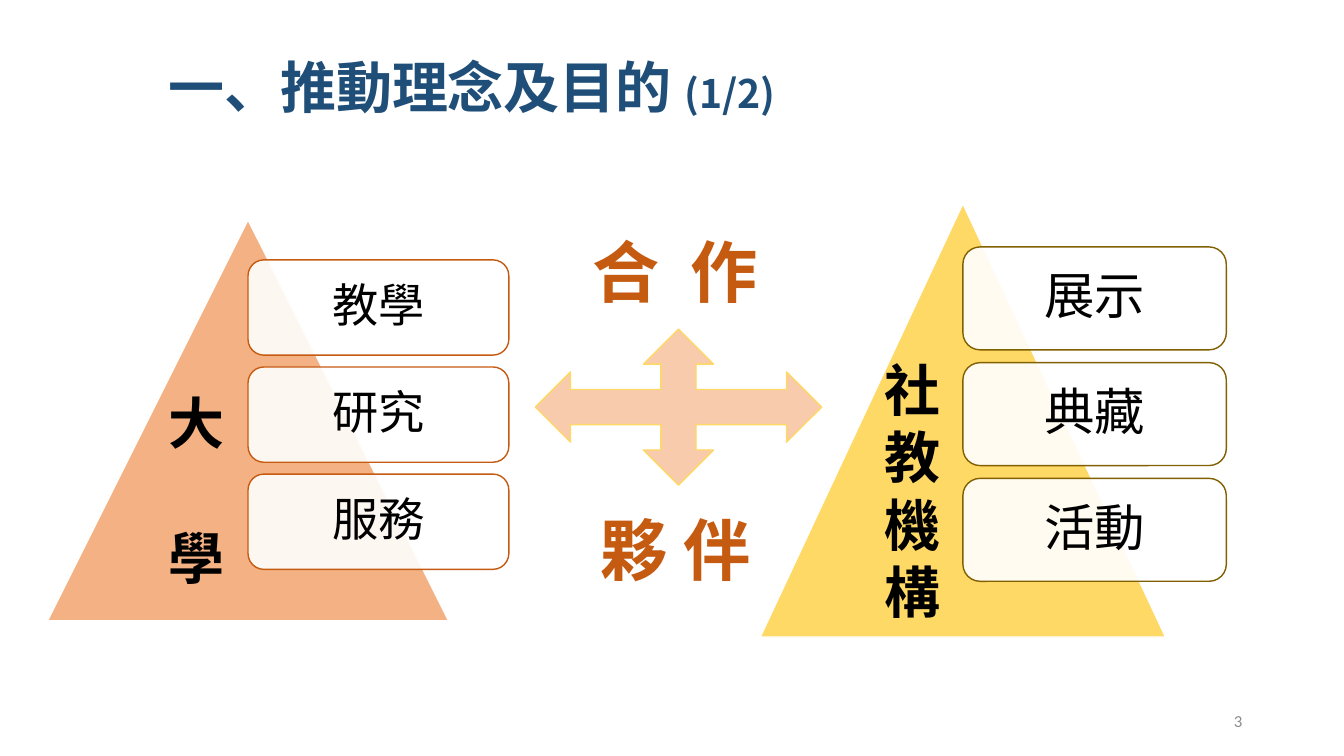
from lxml.etree import SubElement
from pptx import Presentation
from pptx.dml.color import RGBColor
from pptx.enum.shapes import MSO_SHAPE as SHAPE
from pptx.enum.text import MSO_ANCHOR as ANCHOR, MSO_AUTO_SIZE as AUTO, PP_ALIGN as ALIGN
from pptx.oxml.ns import qn
from pptx.util import Inches, Pt

BODY, HEAD = "Calibri", "Noto Sans CJK SC"


def rgb(value):
    return RGBColor.from_string(value)


def add_shape(shapes, kind, box, fill, line, opacity=None):
    sp = shapes.add_shape(kind, *map(Inches, box))
    sp.shadow.inherit = False
    sp.fill.solid()
    sp.fill.fore_color.rgb = rgb(fill)
    sp.line.color.rgb = rgb(line)
    sp.line.width = Pt(1)
    if opacity:
        color = sp.fill._xPr.find(qn("a:solidFill"))[0]
        SubElement(color, qn("a:alpha"), val=str(opacity * 1000))
    return sp


def add_run(p, text, size, color, name=BODY, bold=False, outline=None):
    r = p.add_run()
    r.text = text
    font = r.font
    font.size, font.bold = Pt(size), bold
    font.color.rgb = rgb(color)
    font.name = name
    rpr = r._r.get_or_add_rPr()
    ea = SubElement(rpr, qn("a:ea"), typeface=name)
    rpr.find(qn("a:latin")).addnext(ea)
    if outline:
        ln = rpr.makeelement(qn("a:ln"), {"w": str(Pt(1.75))})
        fill = SubElement(ln, qn("a:solidFill"))
        SubElement(fill, qn("a:srgbClr"), val=outline)
        rpr.insert(0, ln)


def add_text(shapes, box, grow=True):
    tf = shapes.add_textbox(*map(Inches, box)).text_frame
    tf.word_wrap = True
    if grow:
        tf.auto_size = AUTO.SHAPE_TO_FIT_TEXT
    return tf


def add_title(slide, box):
    p = add_text(slide.shapes, box).paragraphs[0]
    add_run(p, "一、推動理念及目的 ", 40, "1F4E79", HEAD, True)
    add_run(p, "(1/2)", 28, "1F4E79", HEAD, True)


def add_pyramid(slide, box, fill, line, cards, size):
    x, y, w, h = box
    shapes = slide.shapes.add_group_shape().shapes
    add_shape(shapes, SHAPE.ISOSCELES_TRIANGLE, box, fill, "FFFFFF")
    for i, text in enumerate(cards):
        card = (x + w * 0.5, y + h * (0.1 + 0.267 * i), w * 0.65, h * 0.2375)
        sp = add_shape(shapes, SHAPE.ROUNDED_RECTANGLE, card, "FFFFFF", line, 90)
        tf = sp.text_frame
        tf.vertical_anchor = ANCHOR.MIDDLE
        tf.margin_left = tf.margin_right = Inches(0.15)
        tf.margin_top = tf.margin_bottom = Inches(0.15)
        p = tf.paragraphs[0]
        p.alignment, p.line_spacing = ALIGN.CENTER, 0.9
        p.space_after = Pt(size * 0.35)
        add_run(p, text, size, "000000")


def add_label(slide, box, letters, gap=0):
    tf = add_text(slide.shapes, box)
    for i, letter in enumerate(letters):
        p = tf.add_paragraph() if i else tf.paragraphs[0]
        if i:
            p.space_before = Pt(gap)
        add_run(p, letter, 40, "000000", bold=True)


def add_partnership(slide, box):
    x, y, w, h = box
    arrow = (x, y + h * 0.28, w, h * 0.423)
    add_shape(slide.shapes, SHAPE.QUAD_ARROW, arrow, "F8CBAD", "FFD966")
    for text, dx, dy, width in (("合  作", 0.47, 0, 2.37), ("夥 伴", 0.55, 2.75, 1.76)):
        p = add_text(slide.shapes, (x + dx, y + dy, width, 0.91)).paragraphs[0]
        add_run(p, text, 48, "C55A11", bold=True, outline="ED7D31")


def add_page_number(slide, box):
    tf = add_text(slide.shapes, box, grow=False)
    tf.vertical_anchor = ANCHOR.MIDDLE
    p = tf.paragraphs[0]
    p.alignment = ALIGN.RIGHT
    add_run(p, "3", 12, "8C8C8C")


def main():
    prs = Presentation()
    prs.slide_width, prs.slide_height = Inches(13.33), Inches(7.5)
    slide = prs.slides.add_slide(prs.slide_layouts[6])
    add_page_number(slide, (9.42, 6.95, 3, 0.4))
    add_title(slide, (1.57, 0.47, 6.67, 0.77))
    add_pyramid(slide, (7.54, 2.02, 4.02, 4.3), "FFD966", "806000",
                ("展示", "典藏", "活動"), 36)
    add_pyramid(slide, (0.47, 2.18, 3.98, 3.98), "F4B183", "C55A11",
                ("教學", "研究", "服務"), 33)
    add_label(slide, (1.57, 3.81, 1.06, 2.12), "大學", 48)
    add_label(slide, (8.67, 3.48, 1, 2.79), "社教機構")
    add_partnership(slide, (5.31, 2.24, 2.84, 3.66))
    prs.save("out.pptx")


if __name__ == "__main__":
    main()
